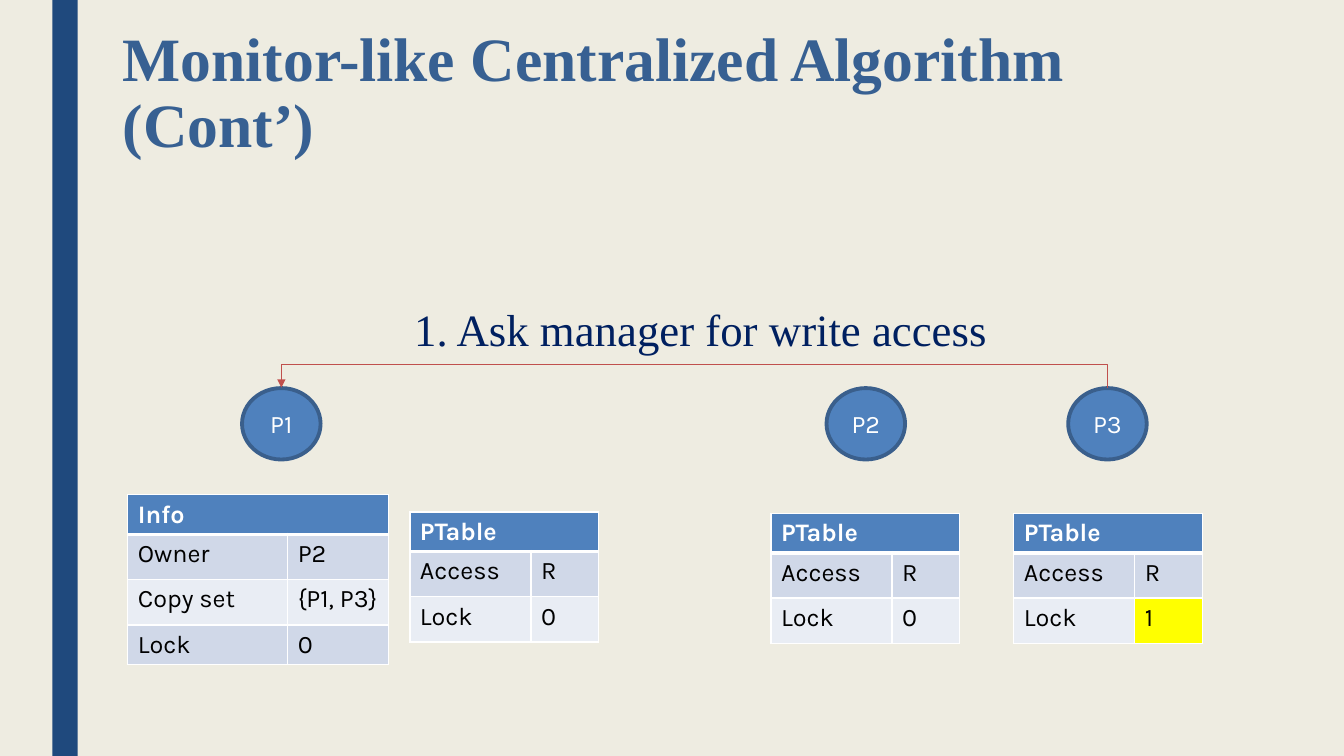
from dataclasses import dataclass

from lxml.etree import SubElement
from pptx import Presentation
from pptx.dml.color import RGBColor
from pptx.enum.shapes import MSO_CONNECTOR as Connector, MSO_SHAPE as Shape
from pptx.enum.text import MSO_ANCHOR as Anchor, PP_ALIGN as Align
from pptx.oxml.ns import qn
from pptx.util import Cm, Pt


@dataclass(frozen=True)
class Theme:
    background: str = "EEECE1"
    bar: str = "1F497D"
    accent: str = "4F81BD"
    outline: str = "3A5F8C"
    title: str = "376092"
    label: str = "002060"
    arrow: str = "C0504D"
    white: str = "FFFFFF"
    black: str = "000000"
    bands: tuple = ("D0D8E8", "E9EDF4")
    highlight: str = "FFFF00"
    heading_font: str = "Times New Roman"
    body_font: str = "Karla"
    title_size: int = 44
    label_size: int = 32
    body_size: int = 18


THEME = Theme()
TITLE = "Monitor-like Centralized Algorithm (Cont’)"
LABEL = "1. Ask manager for write access"
PROCESSES = [("P1", 6.1), ("P2", 20.83), ("P3", 26.92)]
PROCESS_TOP, PROCESS_WIDTH, PROCESS_HEIGHT = 9.78, 1.98, 1.8

INFO_COLUMNS, PTABLE_COLUMNS = (4.03, 2.55), (3.05, 1.7)
INFO_ROWS, PTABLE_ROWS = (0.9, 1.14, 1.14, 0.9), (0.9, 1.14, 1.14)
INFO = [("Owner", "P2"), ("Copy set", "{P1, P3}"), ("Lock", "0")]
UNLOCKED = [("Access", "R"), ("Lock", "0")]
LOCKED = [("Access", "R"), ("Lock", "1")]
TABLES = [
    ("Info", INFO, 3.22, 12.47, INFO_COLUMNS, INFO_ROWS, None),
    ("PTable", UNLOCKED, 10.33, 12.9, PTABLE_COLUMNS, PTABLE_ROWS, None),
    ("PTable", UNLOCKED, 19.43, 12.93, PTABLE_COLUMNS, PTABLE_ROWS, None),
    ("PTable", LOCKED, 25.55, 12.93, PTABLE_COLUMNS, PTABLE_ROWS, (2, 1)),
]


def color(value):
    return RGBColor.from_string(value)


def write(frame, text, size, font, ink, bold=False):
    frame.text = text
    para = frame.paragraphs[0]
    for span in para.runs:
        span.font.size = Pt(size)
        span.font.name = font
        span.font.bold = bold
        span.font.color.rgb = color(ink)
    return para


def add_preset(slide, kind, left, top, width, height, fill):
    shape = slide.shapes.add_shape(kind, Cm(left), Cm(top), Cm(width), Cm(height))
    shape.shadow.inherit = False
    shape.fill.solid()
    shape.fill.fore_color.rgb = color(fill)
    shape.line.fill.background()
    return shape


def add_text(slide, left, top, width, height, wrap, *style):
    box = slide.shapes.add_textbox(Cm(left), Cm(top), Cm(width), Cm(height))
    box.text_frame.word_wrap = wrap
    return write(box.text_frame, *style)


def add_process(slide, name, left):
    circle = add_preset(slide, Shape.OVAL, left, PROCESS_TOP, PROCESS_WIDTH,
                        PROCESS_HEIGHT, THEME.accent)
    circle.line.color.rgb = color(THEME.outline)
    circle.line.width = Pt(2.75)
    frame = circle.text_frame
    frame.margin_left = frame.margin_right = 0
    frame.vertical_anchor = Anchor.MIDDLE
    para = write(frame, name, THEME.body_size, THEME.body_font, THEME.white)
    para.alignment = Align.CENTER


def add_borders(cell, row):
    widths = {"L": 1, "R": 1, "T": 3 if row == 1 else 1, "B": 3 if row == 0 else 1}
    properties = cell._tc.get_or_add_tcPr()
    for side, width in widths.items():
        line = SubElement(properties, qn(f"a:ln{side}"), w=str(Pt(width)))
        fill = SubElement(line, qn("a:solidFill"))
        SubElement(fill, qn("a:srgbClr"), val=THEME.white)


def add_state_table(slide, header, records, left, top, columns, heights, marked):
    rows = [(header, "")] + records
    table = slide.shapes.add_table(len(rows), len(columns), Cm(left), Cm(top),
                                   Cm(sum(columns)), Cm(sum(heights))).table
    for column, width in zip(table.columns, columns):
        column.width = Cm(width)
    for r, (values, height) in enumerate(zip(rows, heights)):
        table.rows[r].height = Cm(height)
        for c, value in enumerate(values):
            cell = table.cell(r, c)
            add_borders(cell, r)
            fill = THEME.accent if r == 0 else THEME.bands[(r - 1) % 2]
            cell.fill.solid()
            cell.fill.fore_color.rgb = color(THEME.highlight if (r, c) == marked else fill)
            ink = THEME.white if r == 0 else THEME.black
            write(cell.text_frame, value, THEME.body_size, THEME.body_font, ink, r == 0)
    table.cell(0, 0).merge(table.cell(0, 1))


def add_request_arrow(slide, start, end, level, rise):
    depth, span = 0.02, start - end
    left, top = (start + end - depth) / 2, level - span / 2
    arrow = slide.shapes.add_connector(Connector.ELBOW, Cm(left), Cm(top),
                                       Cm(left + depth), Cm(top + span))
    arrow.line.color.rgb = color(THEME.arrow)
    arrow.line.width = Pt(1)
    properties = arrow._element.spPr
    frame = properties.find(qn("a:xfrm"))
    frame.set("rot", str(270 * 60000))
    frame.set("flipV", "1")
    guides = properties.find(qn("a:prstGeom")).get_or_add_avLst()
    SubElement(guides, qn("a:gd"), name="adj1", fmla=f"val {round(rise / depth * 100000)}")
    SubElement(properties.find(qn("a:ln")), qn("a:tailEnd"), type="triangle")
    SubElement(properties, qn("a:effectLst"))


def main():
    deck = Presentation()
    deck.slide_width, deck.slide_height = Cm(33.87), Cm(19.05)
    page = deck.slides.add_slide(deck.slide_layouts[6])
    page.background.fill.solid()
    page.background.fill.fore_color.rgb = color(THEME.background)

    add_preset(page, Shape.RECTANGLE, 1.32, 0, 0.64, 19.05, THEME.bar)
    for name, left in PROCESSES:
        add_process(page, name, left)
    for state in TABLES:
        add_state_table(page, *state)

    centers = {name: left + PROCESS_WIDTH / 2 for name, left in PROCESSES}
    add_request_arrow(page, centers["P3"], centers["P1"], PROCESS_TOP, 0.61)
    add_text(page, 10.19, 7.49, 15.09, 1.63, False, LABEL, THEME.label_size,
             THEME.heading_font, THEME.label)
    title = add_text(page, 2.84, 0.61, 29.1, 4.11, True, TITLE, THEME.title_size,
                     THEME.heading_font, THEME.title, True)
    title.line_spacing = 0.89
    deck.save("out.pptx")


if __name__ == "__main__":
    main()
